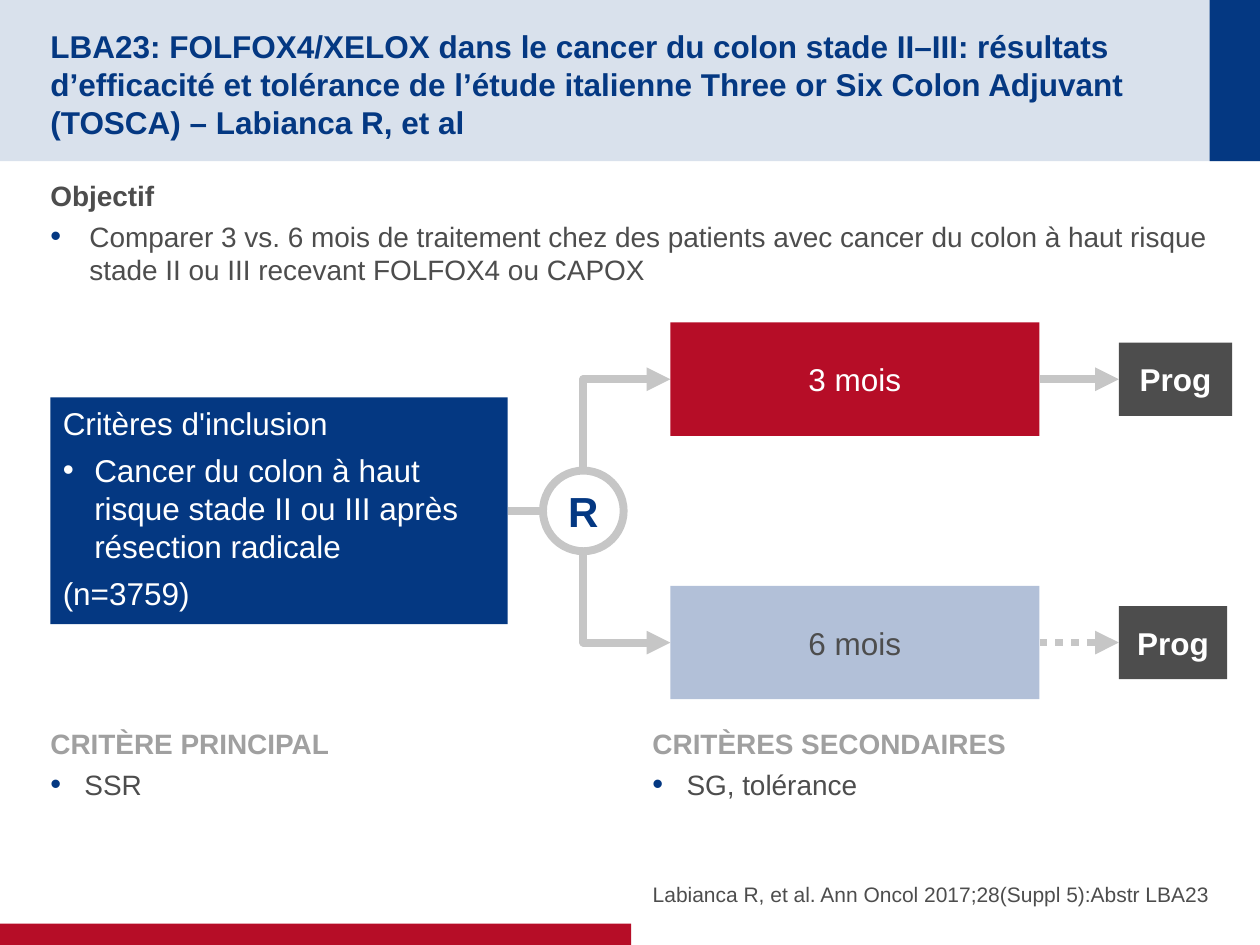
from lxml import etree
from pptx import Presentation
from pptx.dml.color import RGBColor
from pptx.enum.dml import MSO_LINE
from pptx.enum.shapes import MSO_CONNECTOR as LINK, MSO_SHAPE as SHAPE
from pptx.enum.text import MSO_ANCHOR as ANCHOR, MSO_AUTO_SIZE as AUTOSIZE, PP_ALIGN as ALIGN
from pptx.oxml.ns import qn
from pptx.util import Inches, Pt

COLORS = {"navy": "043882", "band": "D9E1EC", "red": "B60D27", "dark": "4D4D4D",
          "line": "C6C6C6", "heading": "A0A0A0", "pale": "B2C0D8", "white": "FFFFFF"}
LEFT, RIGHT_COLUMN, COLUMN_WIDTH = 0.4, 5.08, 4.52


def rgb(name):
    """Return the named palette colour."""
    return RGBColor.from_string(COLORS[name])


def set_frame(frame, insets=(0, 0.05, 0, 0.05), anchor=ANCHOR.TOP, wrap=True):
    """Set the insets, anchor and wrapping of a text frame."""
    frame.auto_size = AUTOSIZE.NONE
    frame.word_wrap = wrap
    frame.vertical_anchor = anchor
    (frame.margin_left, frame.margin_top,
     frame.margin_right, frame.margin_bottom) = map(Inches, insets)


def write(paragraph, text, size, color, bold=False, align=ALIGN.LEFT, after=0):
    """Add one formatted run to a paragraph."""
    paragraph.alignment = align
    paragraph.space_before = Pt(0)
    paragraph.space_after = Pt(after)
    run = paragraph.add_run()
    run.text = text
    run.font.name = "Arial"
    run.font.size = Pt(size)
    run.font.bold = bold
    run.font.color.rgb = rgb(color)


def add_bullet(paragraph, indent, color, percent=100):
    """Give a paragraph a hanging bullet."""
    props = paragraph._p.get_or_add_pPr()
    props.set("marL", str(Inches(indent)))
    props.set("indent", str(-Inches(indent)))
    bullet_color = etree.SubElement(props, qn("a:buClr"))
    etree.SubElement(bullet_color, qn("a:srgbClr"), val=COLORS[color])
    etree.SubElement(props, qn("a:buSzPct"), val=str(percent * 1000))
    etree.SubElement(props, qn("a:buFont"), typeface="Arial")
    etree.SubElement(props, qn("a:buChar"), char="•")


def add_block(slide, box, fill=None, kind=SHAPE.RECTANGLE):
    """Add a plain shape without outline."""
    block = slide.shapes.add_shape(kind, *map(Inches, box))
    block.shadow.inherit = False
    block.line.fill.background()
    if fill:
        block.fill.solid()
        block.fill.fore_color.rgb = rgb(fill)
    else:
        block.fill.background()
    return block


def add_label(slide, box, text, fill, color="white", bold=False):
    """Add a filled box with a centred label."""
    label = add_block(slide, box, fill)
    set_frame(label.text_frame, (0.1, 0, 0.1, 0), ANCHOR.MIDDLE)
    write(label.text_frame.paragraphs[0], text, 18, color, bold, ALIGN.CENTER)
    return label


def style_link(link, arrow=True):
    """Format a connector as a thick grey line."""
    link.line.color.rgb = rgb("line")
    link.line.width = Pt(4.5)
    if arrow:
        etree.SubElement(link.line._get_or_add_ln(), qn("a:tailEnd"), type="triangle")
    etree.SubElement(link._element.spPr, qn("a:effectLst"))


def join(slide, start, end, left_site=1, arrow=True, dotted=False):
    """Join the right side of one shape to the left side of another."""
    link = slide.shapes.add_connector(LINK.STRAIGHT, 0, 0, 0, 0)
    link.begin_connect(start, 3)
    link.end_connect(end, left_site)
    link.end_x, link.end_y = end.left, link.begin_y
    if dotted:
        link.line.dash_style = MSO_LINE.ROUND_DOT
    style_link(link, arrow)


def add_elbow(slide, start, end):
    """Draw an arrow that runs vertically from start, then right to end."""
    (x1, y1), (x2, y2) = start, end
    upward = y2 < y1
    half_rise, half_run = abs(y2 - y1) / 2, (x2 - x1) / 2
    x, y = (x1 + x2) / 2, (y1 + y2) / 2
    if upward:
        half_run = -half_run
    link = slide.shapes.add_connector(
        LINK.ELBOW, Inches(x + half_rise), Inches(y - half_run),
        Inches(x - half_rise), Inches(y + half_run))
    props = link._element.spPr
    props.find(qn("a:xfrm")).set("rot", str((90 if upward else 270) * 60000))
    props.find(qn("a:prstGeom")).set("prst", "bentConnector2")
    style_link(link)


def add_header(slide, box, text):
    """Draw the header band and place the title on it."""
    left, top, width, height = box
    add_block(slide, box, "band")
    add_block(slide, (left + width - 0.4, top, 0.4, height), "navy")
    title = slide.shapes.title
    title.left, title.top, title.width, title.height = map(
        Inches, (LEFT, top + 0.2, 9.01, height - 0.4))
    set_frame(title.text_frame, (0, 0.05, 0, 0), ANCHOR.MIDDLE)
    write(title.text_frame.paragraphs[0], text, 18, "navy", True)
    slide.shapes._spTree.append(title._element)


def add_section(slide, box, heading, point, heading_color, indent, inset=0):
    """Write a bold heading with one bullet point."""
    frame = slide.shapes.add_textbox(*map(Inches, box)).text_frame
    set_frame(frame, (inset, 0.05, inset, 0.05))
    write(frame.paragraphs[0], heading, 16, heading_color, True, after=4)
    bullet = frame.add_paragraph()
    write(bullet, point, 16, "dark", after=4)
    add_bullet(bullet, indent, "navy", 110)


def add_criteria(slide, box):
    """Draw the inclusion criteria box."""
    criteria = add_block(slide, box, "navy")
    frame = criteria.text_frame
    set_frame(frame, (0.1, 0.05, 0.1, 0.05))
    write(frame.paragraphs[0], "Critères d'inclusion", 18, "white", after=5.4)
    bullet = frame.add_paragraph()
    write(bullet, "Cancer du colon à haut risque stade II ou III après résection radicale",
          18, "white", after=5.4)
    add_bullet(bullet, 0.25, "white")
    write(frame.add_paragraph(), "(n=3759)", 18, "white", after=5.4)
    return criteria


def add_trial(slide, box):
    """Draw the randomisation flow from inclusion to progression."""
    left, top, width, height = box
    middle = top + height / 2
    size, arm_left, arm_width, arm_height, prog_height = 0.64, 5.32, 2.93, 0.9, 0.58
    node_x, prog_left = 4.63, 8.88
    criteria = add_criteria(slide, (left, middle - 0.9, 3.63, 1.8))
    node = add_block(slide, (node_x - size / 2, middle - size / 2, size, size), kind=SHAPE.OVAL)
    node.line.color.rgb = rgb("line")
    node.line.width = Pt(4.5)
    set_frame(node.text_frame, (0.1, 0.05, 0.1, 0.05), ANCHOR.MIDDLE, wrap=False)
    write(node.text_frame.paragraphs[0], "R", 24, "navy", True, ALIGN.CENTER)
    join(slide, criteria, node, left_site=2, arrow=False)

    arms = [("3 mois", "red", "white", -1, left + width - prog_left),
            ("6 mois", "pale", "dark", 1, 0.86)]
    for text, fill, color, side, prog_width in arms:
        y = middle + side * (height - arm_height) / 2
        add_elbow(slide, (node_x, middle + side * size / 2), (arm_left, y))
        arm = add_label(slide, (arm_left, y - arm_height / 2, arm_width, arm_height),
                        text, fill, color)
        prog = add_label(slide, (prog_left, y - prog_height / 2, prog_width, prog_height),
                         "Prog", "dark", bold=True)
        join(slide, arm, prog, dotted=side > 0)


def add_footer(slide, box, citation):
    """Draw the red footer bar and write the citation above it."""
    add_block(slide, (0, 7.33, 5.01, 0.17), "red")
    frame = slide.shapes.add_textbox(*map(Inches, box)).text_frame
    set_frame(frame, (0, 0, 0, 0), ANCHOR.BOTTOM)
    write(frame.paragraphs[0], citation, 12, "dark", align=ALIGN.RIGHT, after=4)


def main():
    """Build and save the slide."""
    deck = Presentation()
    deck.slide_width, deck.slide_height = Inches(10), Inches(7.5)
    slide = deck.slides.add_slide(deck.slide_layouts[5])
    add_header(slide, (0, 0, 10, 1.28),
               "LBA23: FOLFOX4/XELOX dans le cancer du colon stade II–III: résultats "
               "d’efficacité et tolérance de l’étude italienne Three or Six Colon Adjuvant "
               "(TOSCA) – Labianca R, et al")
    add_section(slide, (LEFT, 1.37, 9.2, 1), "Objectif",
                "Comparer 3 vs. 6 mois de traitement chez des patients avec cancer du colon "
                "à haut risque stade II ou III recevant FOLFOX4 ou CAPOX", "dark", 0.31)
    add_trial(slide, (LEFT, 2.56, 9.38, 2.99))
    endpoints = [(LEFT, 0, "CRITÈRE PRINCIPAL", "SSR"),
                 (RIGHT_COLUMN, 0.1, "CRITÈRES SECONDAIRES", "SG, tolérance")]
    for left, inset, heading, point in endpoints:
        add_section(slide, (left, 5.72, COLUMN_WIDTH, 0.95), heading, point,
                    "heading", 0.27, inset)
    add_footer(slide, (RIGHT_COLUMN, 6.67, COLUMN_WIDTH, 0.53),
               "Labianca R, et al. Ann Oncol 2017;28(Suppl 5):Abstr LBA23")
    deck.save("out.pptx")


if __name__ == "__main__":
    main()
